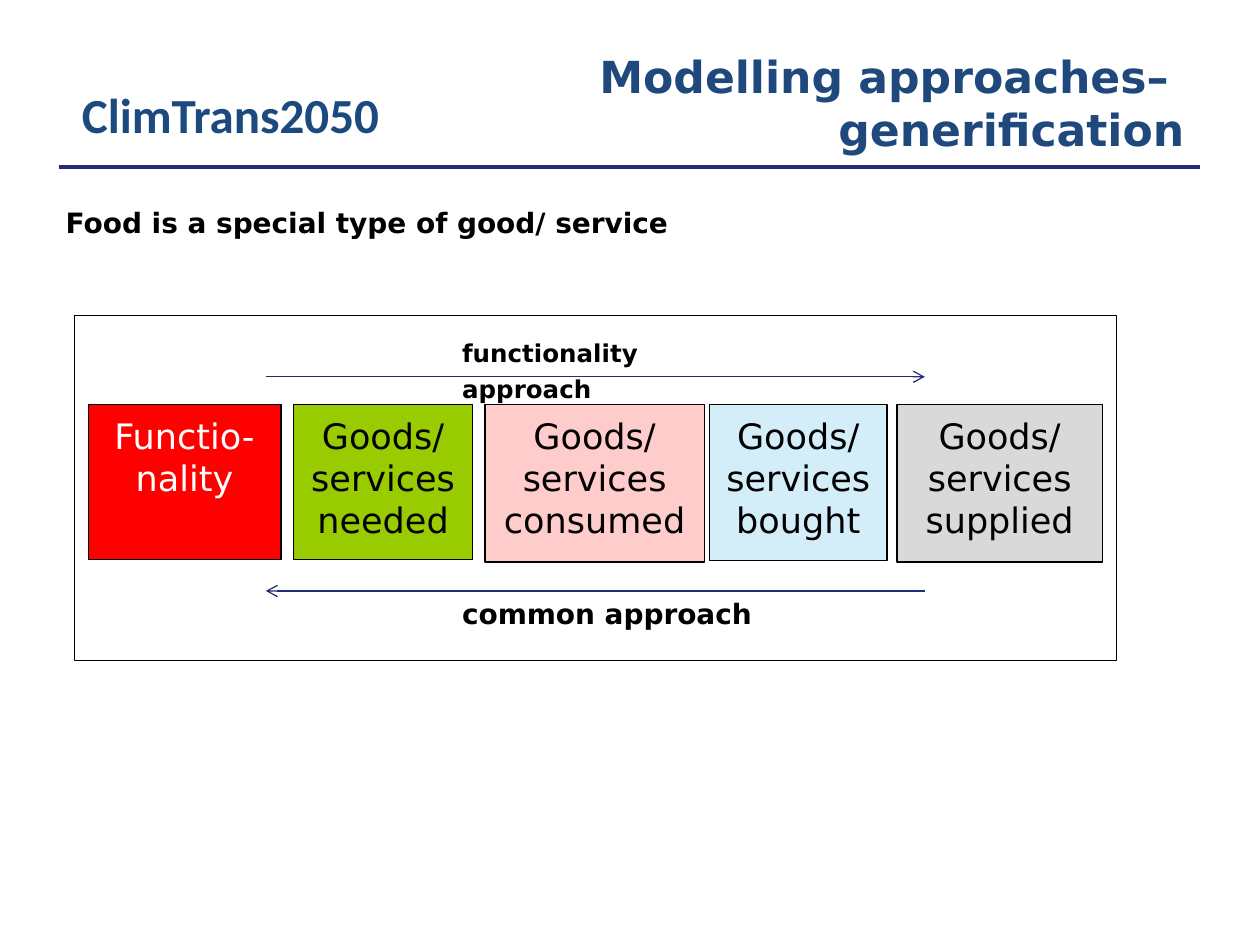
from lxml.etree import SubElement
from pptx import Presentation
from pptx.dml.color import RGBColor
from pptx.enum.shapes import MSO_CONNECTOR, MSO_SHAPE
from pptx.enum.text import MSO_ANCHOR, MSO_AUTO_SIZE, PP_ALIGN
from pptx.oxml.ns import qn
from pptx.util import Pt

BLACK = RGBColor(0x00, 0x00, 0x00)
WHITE = RGBColor(0xFF, 0xFF, 0xFF)
NAVY = RGBColor(0x23, 0x2C, 0x76)
TITLE_BLUE = RGBColor(0x1F, 0x49, 0x7D)
PROJECT_BLUE = RGBColor(0x1B, 0x4B, 0x7E)
RED = RGBColor(0xFF, 0x00, 0x00)
GREEN = RGBColor(0x99, 0xCC, 0x00)
PINK = RGBColor(0xFF, 0xCC, 0xCC)
LIGHT_BLUE = RGBColor(0xD3, 0xEE, 0xF9)
GREY = RGBColor(0xD9, 0xD9, 0xD9)

SANS = "DejaVu Sans"
LABEL_SPACING = {"line_spacing": 1.2, "space_after": Pt(3)}
STAGE_SPACING = {"alignment": PP_ALIGN.CENTER, "space_after": Pt(10)}
STAGE_FRAME = {
    "word_wrap": True,
    "margin_left": Pt(7.2),
    "margin_right": Pt(7.2),
    "margin_top": Pt(5.76),
    "margin_bottom": Pt(5.76),
    "vertical_anchor": MSO_ANCHOR.TOP,
}
STAGES = [
    ("Functio-nality", 7.9, 110.2, 88.6, RED, WHITE),
    ("Goods/ services needed", 125.3, 102.2, 88.6, GREEN, BLACK),
    ("Goods/ services consumed", 234.7, 125.3, 90, PINK, BLACK),
    ("Goods/ services bought", 362.9, 101.5, 89.3, LIGHT_BLUE, BLACK),
    ("Goods/ services supplied", 470.1, 117.4, 90, GREY, BLACK),
]


def apply_format(target, values):
    """Set each named attribute on the target."""
    for name, value in values.items():
        setattr(target, name, value)


def write_text(shape, text, size, color, bold=True, font=SANS, spacing=None):
    """Write one formatted paragraph into a shape."""
    shape.text_frame.text = text
    paragraph = shape.text_frame.paragraphs[0]
    apply_format(paragraph, spacing or {})
    for run in paragraph.runs:
        apply_format(run.font, {"name": font, "size": Pt(size), "bold": bold})
        run.font.color.rgb = color


def add_label(slide, box, text, size, color=BLACK, **text_format):
    """Add a wrapping text box."""
    label = slide.shapes.add_textbox(*map(Pt, box))
    label.text_frame.word_wrap = True
    write_text(label, text, size, color, **text_format)


def add_line(slide, start, end, width, arrow=False):
    """Add a navy line, with an open arrowhead at its end if wanted."""
    line = slide.shapes.add_connector(
        MSO_CONNECTOR.STRAIGHT, *map(Pt, (*start, *end)))
    line.line.color.rgb = NAVY
    line.line.width = Pt(width)
    properties = line.element.spPr
    if arrow:
        SubElement(properties.find(qn("a:ln")), qn("a:tailEnd"), type="arrow")
    SubElement(properties, qn("a:effectLst"))


def add_rectangle(slide, box, line_width, fill=None):
    """Add a black-edged rectangle, filled if a colour is given."""
    rectangle = slide.shapes.add_shape(MSO_SHAPE.RECTANGLE, *map(Pt, box))
    rectangle.shadow.inherit = False
    rectangle.line.color.rgb = BLACK
    rectangle.line.width = Pt(line_width)
    if fill is None:
        rectangle.fill.background()
    else:
        rectangle.fill.solid()
        rectangle.fill.fore_color.rgb = fill
    return rectangle


def add_header(slide, left, top, width, height):
    """Place the project name, slide title and rule."""
    add_line(slide, (left, top + height), (left + width, top + height), 2.25)
    add_label(slide, (left + 5.8, top + 23, 208, 41), "ClimTrans2050", 28,
              PROJECT_BLUE, font="Calibri")
    title = slide.shapes.title
    apply_format(title, {
        "left": Pt(left + 101), "top": Pt(top),
        "width": Pt(549), "height": Pt(height)})
    apply_format(title.text_frame, {
        "word_wrap": True,
        "auto_size": MSO_AUTO_SIZE.NONE,
        "vertical_anchor": MSO_ANCHOR.MIDDLE})
    write_text(title, "Modelling approaches– \vgenerification", 25.2,
               TITLE_BLUE, spacing={"alignment": PP_ALIGN.RIGHT})


def add_approach_diagram(slide, left, top, width, height):
    """Place the framed chain of stages between its two approach arrows."""
    add_rectangle(slide, (left, top, width, height), 0.5)
    for text, offset, stage_width, stage_height, fill, color in STAGES:
        box = (left + offset, top + 51.1, stage_width, stage_height)
        stage = add_rectangle(slide, box, 0.75, fill)
        apply_format(stage.text_frame, STAGE_FRAME)
        write_text(stage, text, 20, color, bold=False, spacing=STAGE_SPACING)
    arrow_left, arrow_right = left + 109.4, left + 486
    upper, lower = top + 35.3, top + 157.7
    add_line(slide, (arrow_left, upper), (arrow_right, upper), 0.75, True)
    add_line(slide, (arrow_right, lower), (arrow_left, lower), 0.75, True)
    add_label(slide, (left + 214.5, top + 6.5, 185, 25),
              "functionality approach", 14, spacing=LABEL_SPACING)
    add_label(slide, (left + 214.5, top + 153.4, 201, 30),
              "common approach", 16, spacing=LABEL_SPACING)


def main():
    """Build and save the slide."""
    presentation = Presentation()
    presentation.slide_width = Pt(720)
    presentation.slide_height = Pt(540)
    slide = presentation.slides.add_slide(presentation.slide_layouts[5])
    add_header(slide, 34, 21.5, 652, 74)
    add_label(slide, (30.5, 110, 369, 78),
              "Food is a special type of good/ service", 16,
              spacing=LABEL_SPACING)
    add_approach_diagram(slide, 42.5, 180, 595.5, 197.5)
    presentation.save("out.pptx")


if __name__ == "__main__":
    main()
